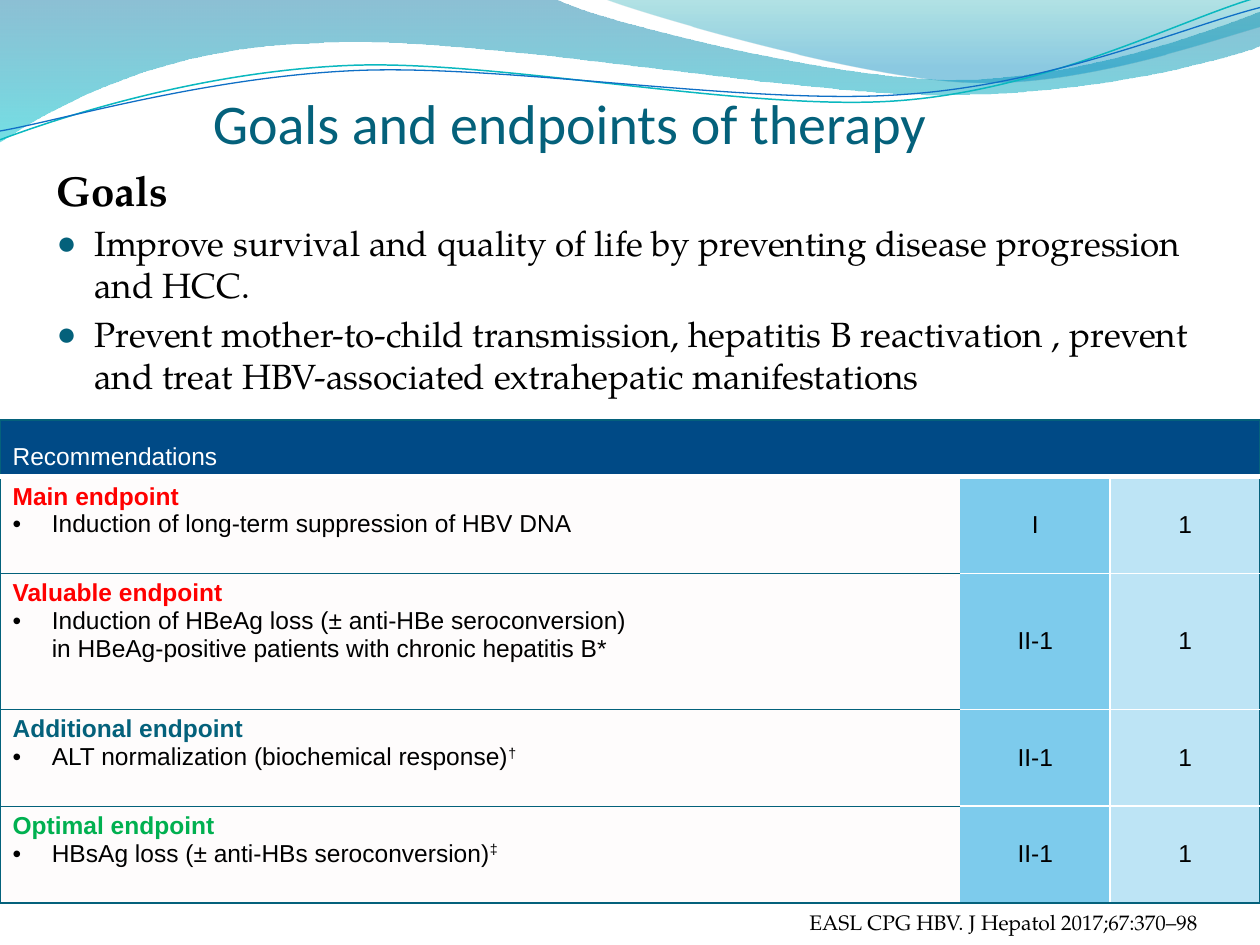
from dataclasses import dataclass

from lxml import etree
from pptx import Presentation
from pptx.dml.color import RGBColor
from pptx.enum.text import MSO_ANCHOR, MSO_AUTO_SIZE, PP_ALIGN
from pptx.oxml.ns import qn
from pptx.util import Cm, Pt

TOP, MIDDLE, BOTTOM = MSO_ANCHOR.TOP, MSO_ANCHOR.MIDDLE, MSO_ANCHOR.BOTTOM
LEFT, CENTER, RIGHT = PP_ALIGN.LEFT, PP_ALIGN.CENTER, PP_ALIGN.RIGHT
NO_AUTOFIT = MSO_AUTO_SIZE.NONE
PLAIN_TABLE_STYLE = "{2D5ABB26-0587-4C30-8999-92F81FD0307C}"
WAVE_UNIT = Cm(2.54)


@dataclass(frozen=True)
class Theme:
    teal: str = "04617B"
    black: str = "000000"
    white: str = "FFFFFF"
    red: str = "FF0000"
    green: str = "00B050"
    header: str = "004A86"
    cell: str = "FEFCFC"
    grade: str = "7DCBEC"
    title_font: str = "Calibri"
    body_font: str = "TeX Gyre Pagella"
    table_font: str = "Arial"
    title_size: int = 32
    heading_size: int = 24
    body_size: int = 20
    table_size: int = 14
    source_size: int = 12


THEME = Theme()

# Each wave: start point, then cubic segments (two controls and an end) or line ends.
BROAD_WAVE = [(0, 0), (4.4, -0.01), (4.76, 0.17, 6.64, 0.63, 7.58, 0.63),
              (8.53, 0.63, 9.58, 0.26, 10, 0.09), (10.01, 0.36),
              (9.83, 0.44, 8.7, 0.76, 7.46, 0.75), (6.22, 0.75, 3.82, 0.28, 2.57, 0.34),
              (1.29, 0.36, 0.46, 0.83, -0.01, 1.13)]
RIGHT_WAVE = [(4.79, -0.01), (5.09, 0.11, 6.82, 0.62, 7.69, 0.65),
              (8.56, 0.69, 9.61, 0.32, 10, 0.21), (10, 0)]
CYAN_LINE = [(0, 1.11), (0.48, 0.93, 1.58, 0.57, 2.77, 0.52),
             (3.95, 0.47, 5.93, 0.89, 7.13, 0.8), (8.33, 0.71, 9.38, 0.15, 9.98, -0.02)]
BLUE_LINE = [(0, 1.04), (0.47, 0.96, 1.64, 0.61, 2.83, 0.56),
             (4.03, 0.51, 5.97, 0.84, 7.17, 0.75), (8.36, 0.67, 9.41, 0.21, 10, 0.06)]

GOALS = ["Improve survival and quality of life by preventing disease progression and HCC.",
         "Prevent mother-to-child transmission, hepatitis B reactivation , prevent "
         "and treat HBV-associated extrahepatic manifestations"]
# Heading, colour, text, footnote mark, evidence level, grade
ENDPOINTS = [
    ("Main endpoint", THEME.red, "Induction of long-term suppression of HBV DNA", "", "I", "1"),
    ("Valuable endpoint", THEME.red,
     "Induction of HBeAg loss (± anti-HBe seroconversion)\v"
     "in HBeAg-positive patients with chronic hepatitis B*", "", "II-1", "1"),
    ("Additional endpoint", THEME.teal, "ALT normalization (biochemical response)", "†",
     "II-1", "1"),
    ("Optimal endpoint", THEME.green, "HBsAg loss (± anti-HBs seroconversion)", "‡",
     "II-1", "1"),
]
COLUMN_WIDTHS = [19.36, 3.02, 3.02]
ROW_HEIGHTS = [1.14, 1.95, 2.74, 1.95, 1.95]


def bend_segments(shape, segments):
    """Turn the straight segments that have control points into cubic curves."""
    lines = list(shape._element.iter(qn("a:lnTo")))
    for line, segment in zip(lines, segments):
        if len(segment) == 2:
            continue
        curve = etree.Element(qn("a:cubicBezTo"))
        for x, y in zip(segment[::2], segment[1::2]):
            etree.SubElement(curve, qn("a:pt"), x=str(round(x * WAVE_UNIT) - shape.left),
                             y=str(round(y * WAVE_UNIT) - shape.top))
        line.getparent().replace(line, curve)


def set_alpha(parent, percents):
    """Give each colour below parent its opacity."""
    for color, percent in zip(parent.iter(qn("a:srgbClr")), percents):
        etree.SubElement(color, qn("a:alpha")).set("val", str(percent * 1000))


def set_bullet(paragraph, indent, character=None, color=THEME.black, percent=100):
    properties = paragraph._p.get_or_add_pPr()
    properties.set("marL", str(Cm(indent)))
    properties.set("indent", str(-Cm(indent)))
    if character is None:
        etree.SubElement(properties, qn("a:buNone"))
        return
    bullet_color = etree.SubElement(properties, qn("a:buClr"))
    etree.SubElement(bullet_color, qn("a:srgbClr")).set("val", color)
    etree.SubElement(properties, qn("a:buSzPct")).set("val", str(percent * 1000))
    etree.SubElement(properties, qn("a:buFont")).set("typeface", THEME.table_font)
    etree.SubElement(properties, qn("a:buChar")).set("char", character)


def set_borders(cell, **borders):
    """Draw the sides L, R, T and B, each given as (colour, points)."""
    properties = cell._tc.get_or_add_tcPr()
    sides = [side for side in "LRTB" if side in borders]
    for position, side in enumerate(sides):
        color, width = borders[side]
        line = etree.Element(qn(f"a:ln{side}"), w=str(Pt(width)))
        fill = etree.SubElement(line, qn("a:solidFill"))
        etree.SubElement(fill, qn("a:srgbClr")).set("val", color)
        properties.insert(position, line)


class SlideBuilder:
    def __init__(self, slide, theme):
        self.slide = slide
        self.theme = theme

    def wave(self, path, stops=None, line=None):
        """Add a filled wave from (position, colour, opacity) stops, or an open line."""
        start, *ends = [tuple(round(value * WAVE_UNIT) for value in segment[-2:])
                        for segment in path]
        builder = self.slide.shapes.build_freeform(*start)
        builder.add_line_segments(ends, close=stops is not None)
        shape = builder.convert_to_shape()
        bend_segments(shape, path[1:])
        shape.shadow.inherit = False
        if stops:
            shape.fill.gradient()
            shape.fill.gradient_angle = 270
            for stop, (position, color, _) in zip(shape.fill.gradient_stops, stops):
                stop.position = position
                stop.color.rgb = RGBColor.from_string(color)
            set_alpha(shape._element.spPr, [opacity for _, _, opacity in stops])
            shape.line.fill.background()
        else:
            color, width = line
            shape.fill.background()
            shape.line.color.rgb = RGBColor.from_string(color)
            shape.line.width = Pt(width)

    def style(self, paragraph, font, size, color, bold=False, align=LEFT):
        paragraph.alignment = align
        for run in paragraph.runs:
            run.font.name, run.font.size, run.font.bold = font, Pt(size), bold
            run.font.color.rgb = RGBColor.from_string(color)

    def frame(self, shape, box, anchor, margins):
        """Place a text shape in front of what is there and return its text frame."""
        self.slide.shapes._spTree.append(shape._element)
        shape.left, shape.top, shape.width, shape.height = map(Cm, box)
        frame = shape.text_frame
        frame.word_wrap, frame.auto_size, frame.vertical_anchor = True, NO_AUTOFIT, anchor
        (frame.margin_left, frame.margin_top,
         frame.margin_right, frame.margin_bottom) = map(Cm, margins)
        return frame

    def title(self, text, box):
        frame = self.frame(self.slide.shapes.title, box, BOTTOM, (4.29, 0.13, 0, 0.03))
        frame.text = text
        self.style(frame.paragraphs[0], self.theme.title_font, self.theme.title_size,
                   self.theme.teal)

    def body(self, heading, items, box):
        frame = self.frame(self.slide.placeholders[1], box, TOP, (0.25, 0.13, 0.25, 0.13))
        frame.text = "\n".join([heading, *items])
        first, *others = frame.paragraphs
        set_bullet(first, 0)
        self.style(first, self.theme.body_font, self.theme.heading_size, self.theme.black, True)
        for paragraph in others:
            set_bullet(paragraph, 0.76, "●", self.theme.teal, 95)
            self.style(paragraph, self.theme.body_font, self.theme.body_size, self.theme.black)

    def source(self, text, box):
        frame = self.frame(self.slide.placeholders[2], box, BOTTOM, (0.41, 0.2, 1.25, 0.2))
        frame.text = text
        set_bullet(frame.paragraphs[0], 0)
        self.style(frame.paragraphs[0], self.theme.body_font, self.theme.source_size,
                   self.theme.black, align=RIGHT)

    def cell(self, cell, text, fill, color, anchor, align=LEFT):
        cell.text = text
        cell.vertical_anchor = anchor
        cell.fill.solid()
        cell.fill.fore_color.rgb = RGBColor.from_string(fill)
        for paragraph in cell.text_frame.paragraphs:
            self.style(paragraph, self.theme.table_font, self.theme.table_size, color,
                       align=align)

    def endpoint(self, cell, heading, color, text, mark):
        self.cell(cell, f"{heading}\n{text}", self.theme.cell, self.theme.black, TOP)
        first, detail = cell.text_frame.paragraphs
        self.style(first, self.theme.table_font, self.theme.table_size, color, True)
        set_bullet(detail, 0.79, "•")
        if mark:
            run = detail.add_run()
            run.text = mark
            self.style(detail, self.theme.table_font, self.theme.table_size, self.theme.black)
            run._r.get_or_add_rPr().set("baseline", "30000")

    def table(self, header, endpoints, left, top):
        theme = self.theme
        table = self.slide.shapes.add_table(
            len(ROW_HEIGHTS), len(COLUMN_WIDTHS), Cm(left), Cm(top),
            Cm(sum(COLUMN_WIDTHS)), Cm(sum(ROW_HEIGHTS))).table
        table.first_row = table.horz_banding = False
        table._tbl.tblPr.find(qn("a:tableStyleId")).text = PLAIN_TABLE_STYLE
        for column, width in zip(table.columns, COLUMN_WIDTHS):
            column.width = Cm(width)
        for row, height in zip(table.rows, ROW_HEIGHTS):
            row.height = Cm(height)

        outer, thin = (theme.teal, 1), (theme.teal, 0.5)
        divider, gap = (theme.white, 3), (theme.white, 1)
        table.cell(0, 0).merge(table.cell(0, 2))
        self.cell(table.cell(0, 0), header, theme.header, theme.white, BOTTOM)
        for column in range(3):
            set_borders(table.cell(0, column), L=outer, R=outer, T=outer, B=divider)

        for row, (heading, color, text, mark, level, grade) in enumerate(endpoints, 1):
            name_cell, level_cell, grade_cell = table.rows[row].cells
            self.endpoint(name_cell, heading, color, text, mark)
            for cell, value in ((level_cell, level), (grade_cell, grade)):
                self.cell(cell, value, theme.grade, theme.black, MIDDLE, CENTER)
            set_alpha(grade_cell._tc.tcPr, [50])
            first, last = row == 1, row == len(endpoints)
            set_borders(name_cell, L=outer, T=divider if first else thin,
                        B=outer if last else thin)
            edges = {"T": divider if first else gap, "B": outer if last else gap}
            set_borders(level_cell, R=gap, **edges)
            set_borders(grade_cell, L=gap, R=outer, **edges)


def main():
    presentation = Presentation()
    presentation.slide_width, presentation.slide_height = Cm(25.4), Cm(19.05)
    slide = presentation.slides.add_slide(presentation.slide_layouts[3])
    builder = SlideBuilder(slide, THEME)
    builder.wave(BROAD_WAVE, stops=[(0, "0074A1", 45), (1, "00C6CF", 55)])
    builder.wave(RIGHT_WAVE, stops=[(0, "00A1A9", 30), (0.8, "008BBF", 45)])
    builder.wave(CYAN_LINE, line=("0AB8BF", 0.85))
    builder.wave(BLUE_LINE, line=("0F6FC6", 0.75))
    builder.title("Goals and endpoints of therapy", (0, -0.64, 23.06, 3.81))
    builder.source("EASL CPG HBV. J Hepatol 2017;67:370–98", (0.03, 17.04, 25.37, 2.01))
    builder.body("Goals", GOALS, (0.89, 3.18, 23.62, 5.28))
    builder.table("Recommendations", ENDPOINTS, 0, 8.47)
    presentation.save("out.pptx")


if __name__ == "__main__":
    main()
